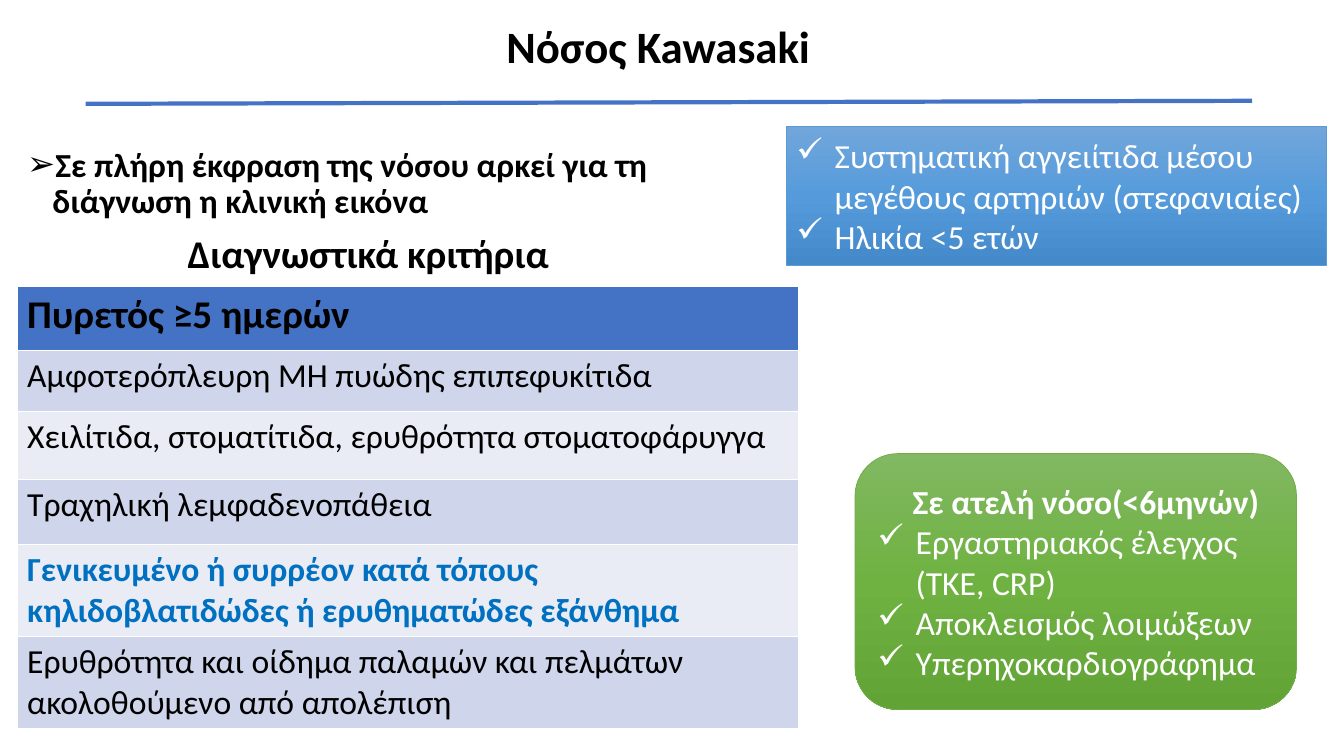
import copy
import dataclasses

import pptx
import pptx.dml.color
import pptx.enum.shapes
import pptx.enum.text
import pptx.oxml
import pptx.oxml.ns
import pptx.util

Inches = pptx.util.Inches
Pt = pptx.util.Pt
RGB = pptx.dml.color.RGBColor.from_string
SHAPES = pptx.enum.shapes.MSO_SHAPE
ALIGN = pptx.enum.text.PP_ALIGN
ANCHOR = pptx.enum.text.MSO_ANCHOR


@dataclasses.dataclass(frozen=True)
class Theme:
    font: str = "Calibri"
    title: int = 32
    heading: int = 28
    text: int = 24
    black: str = "000000"
    white: str = "FFFFFF"
    accent: str = "4472C4"
    highlight: str = "0070C0"
    bands: tuple = ("E9EBF5", "CFD5EA")
    blue: tuple = ("71A6DB", "559BDB", "448ACA")
    blue_edge: str = "5B9BD5"
    green: tuple = ("81B861", "6FB242", "62A336")
    green_edge: str = "70AD47"


THEME = Theme()


def add_xml(parent, tag, **attributes):
    element = pptx.oxml.parse_xml(f"<{tag} {pptx.oxml.ns.nsdecls('a')}/>")
    for name, value in attributes.items():
        element.set(name, str(value))
    parent.append(element)


def place(shape, box):
    shape.left, shape.top, shape.width, shape.height = map(Inches, box)


def write(paragraph, text, size, color, bold=False, align=ALIGN.LEFT,
          bullet=None, left=0, hanging=0, spacing=1.0, before=0):
    paragraph.text = text
    properties = paragraph._p.get_or_add_pPr()
    properties.set("marL", str(Inches(left)))
    properties.set("indent", str(-Inches(hanging)))
    if bullet:
        add_xml(properties, "a:buChar", char=bullet)
    else:
        add_xml(properties, "a:buNone")
    paragraph.alignment = align
    paragraph.line_spacing = spacing
    paragraph.space_before = Pt(before)
    paragraph.font.name = THEME.font
    paragraph.font.size = Pt(size)
    paragraph.font.bold = bold
    paragraph.font.color.rgb = RGB(color)


def add_title(slide, box, text):
    title = slide.shapes.title
    place(title, box)
    frame = title.text_frame
    frame.auto_size = pptx.enum.text.MSO_AUTO_SIZE.NONE
    frame.vertical_anchor = ANCHOR.MIDDLE
    frame.margin_right = Inches(0.38)
    write(frame.paragraphs[0], text, THEME.title, THEME.black, True,
          ALIGN.CENTER, spacing=0.9)


def add_rule(slide, start, end):
    rule = slide.shapes.add_connector(
        pptx.enum.shapes.MSO_CONNECTOR.STRAIGHT, *map(Inches, start + end))
    rule.line.color.rgb = RGB(THEME.accent)
    rule.line.width = Pt(3)
    add_xml(rule._element.spPr, "a:effectLst")


def add_introduction(slide, box, statement, heading):
    introduction = slide.placeholders[1]
    place(introduction, box)
    frame = introduction.text_frame
    frame.auto_size = pptx.enum.text.MSO_AUTO_SIZE.NONE
    write(frame.paragraphs[0], statement, THEME.text, THEME.black, True,
          bullet="➢", left=0.25, hanging=0.25, spacing=0.9)
    write(frame.add_paragraph(), heading, THEME.heading, THEME.black, True,
          left=1.59, spacing=0.9, before=10)


def add_criteria(slide, box, criteria, highlighted):
    table = slide.shapes.add_table(len(criteria), 1, *map(Inches, box)).table
    table.horz_banding = False
    for index, (criterion, height) in enumerate(criteria):
        table.rows[index].height = Inches(height)
        cell = table.cell(index, 0)
        header = index == 0
        marked = index == highlighted
        cell.fill.solid()
        cell.fill.fore_color.rgb = RGB(
            THEME.accent if header else THEME.bands[index % 2])
        write(cell.text_frame.paragraphs[0], criterion,
              THEME.heading if header else THEME.text,
              THEME.highlight if marked else THEME.black, header or marked)


def add_panel(slide, box, outline, gradient, edge, points, heading=None):
    panel = slide.shapes.add_shape(outline, *map(Inches, box))
    panel.shadow.inherit = False
    panel.fill.gradient()
    panel.fill.gradient_angle = 270
    stops = panel._element.spPr.find(".//" + pptx.oxml.ns.qn("a:gsLst"))
    stops.insert(1, copy.deepcopy(stops[0]))
    for index, color in enumerate(gradient):
        stop = panel.fill.gradient_stops[index]
        stop.position = index / (len(gradient) - 1)
        stop.color.rgb = RGB(color)
    panel.line.color.rgb = RGB(edge)
    panel.line.width = Pt(0.5)
    frame = panel.text_frame
    frame.word_wrap = True
    frame.vertical_anchor = ANCHOR.MIDDLE
    paragraph = frame.paragraphs[0]
    if heading:
        write(paragraph, heading, THEME.text, THEME.white, True,
              ALIGN.CENTER, left=0.2)
        paragraph = frame.add_paragraph()
    for index, point in enumerate(points):
        if index:
            paragraph = frame.add_paragraph()
        write(paragraph, point, THEME.text, THEME.white,
              bullet="✓", left=0.38, hanging=0.38)


def add_kawasaki_slide(deck):
    slide = deck.slides.add_slide(deck.slide_layouts[1])
    add_title(slide, (0.92, 0, 11.5, 0.98), "Νόσος Kawasaki")
    add_introduction(
        slide, (0.17, 1.42, 7.17, 5.81),
        "Σε πλήρη έκφραση της νόσου αρκεί για τη διάγνωση η κλινική εικόνα",
        "Διαγνωστικά κριτήρια")
    add_criteria(slide, (0.17, 2.84, 7.75, 4.35), [
        ("Πυρετός ≥5 ημερών", 0.64),
        ("Αμφοτερόπλευρη ΜΗ πυώδης επιπεφυκίτιδα", 0.6),
        ("Χειλίτιδα, στοματίτιδα, ερυθρότητα στοματοφάρυγγα", 0.68),
        ("Τραχηλική λεμφαδενοπάθεια", 0.64),
        ("Γενικευμένο ή συρρέον κατά τόπους κηλιδοβλατιδώδες ή "
         "ερυθηματώδες εξάνθημα", 0.87),
        ("Ερυθρότητα και οίδημα παλαμών και πελμάτων ακολοθούμενο από "
         "απολέπιση", 0.91),
    ], highlighted=4)
    add_panel(
        slide, (8.48, 4.5, 4.38, 2.54), SHAPES.FLOWCHART_ALTERNATE_PROCESS,
        THEME.green, THEME.green_edge,
        ["Εργαστηριακός έλεγχος (ΤΚΕ, CRP)", "Αποκλεισμός λοιμώξεων",
         "Υπερηχοκαρδιογράφημα"],
        heading="Σε ατελή νόσο(<6μηνών)")
    add_panel(
        slide, (7.8, 1.25, 5.36, 1.38), SHAPES.RECTANGLE,
        THEME.blue, THEME.blue_edge,
        ["Συστηματική αγγειίτιδα μέσου μεγέθους αρτηριών (στεφανιαίες)",
         "Ηλικία <5 ετών"])
    add_rule(slide, (0.85, 1.03), (12.42, 1))


def main():
    deck = pptx.Presentation()
    deck.slide_width = Inches(13.33)
    deck.slide_height = Inches(7.5)
    add_kawasaki_slide(deck)
    deck.save("out.pptx")


if __name__ == "__main__":
    main()
